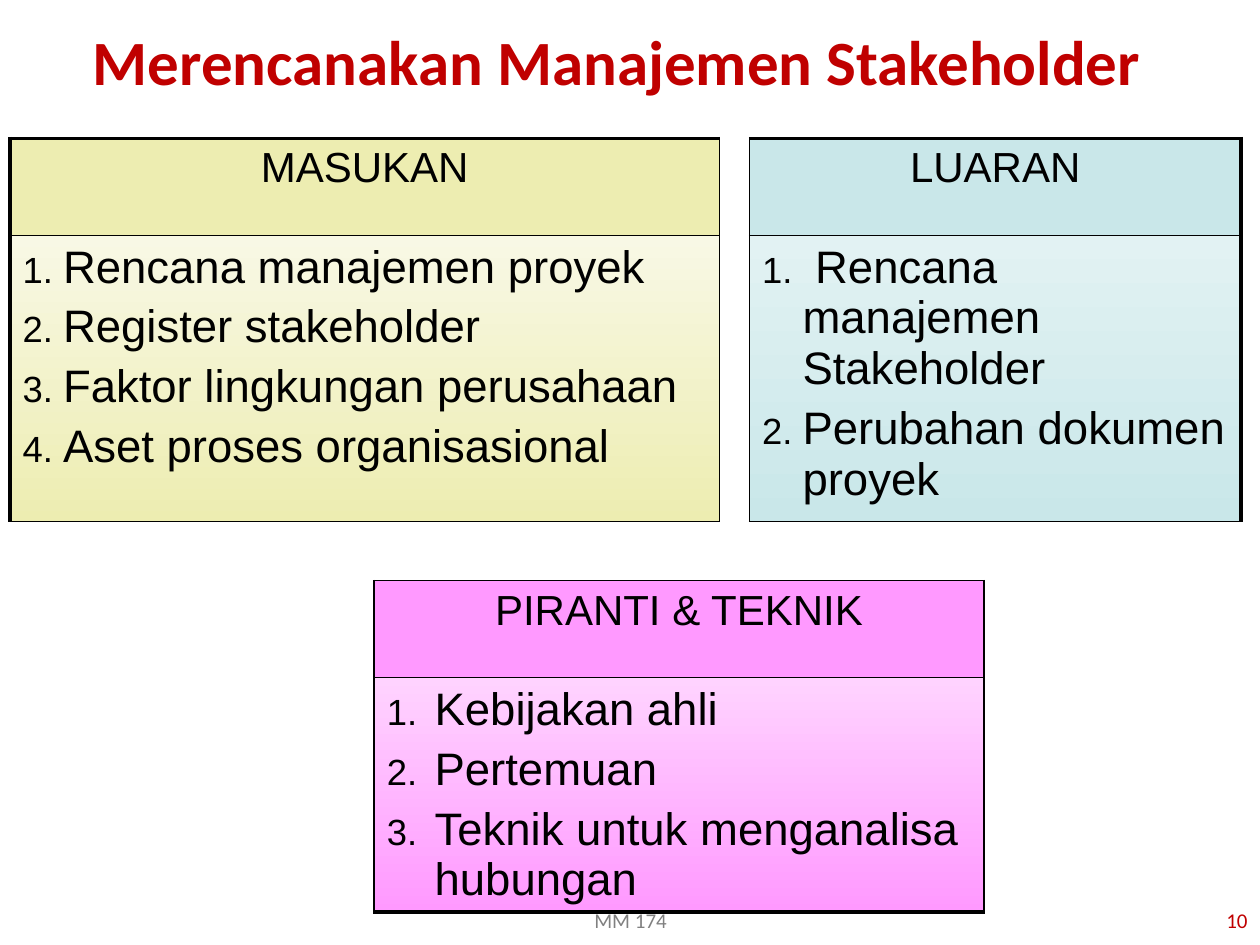
from dataclasses import dataclass

from lxml.etree import SubElement as Sub
from pptx import Presentation
from pptx.dml.color import RGBColor as Rgb
from pptx.enum.text import MSO_ANCHOR as Anchor, PP_ALIGN as Align
from pptx.oxml.ns import qn
from pptx.util import Inches, Pt


@dataclass(frozen=True)
class Theme:
    red: str = "C00000"
    grey: str = "808080"
    ink: str = "000000"
    head: str = "Calibri"
    body: str = "Arial"
    title: int = 36
    label: int = 24
    item: int = 26
    small: int = 12
    thin: float = 1
    thick: float = 2.25
    plain: str = "{2D5ABB26-0587-4C30-8999-92F81FD0307C}"


@dataclass(frozen=True)
class Note:
    text: str
    box: tuple
    align: Align
    size: int
    color: str
    bold: bool = False


@dataclass(frozen=True)
class Panel:
    label: str
    items: tuple
    row: int
    first: int
    last: int
    light: str
    deep: str
    indent: float
    thick: tuple  # outer sides with a heavy line


T = Theme()
COLS = (2.89, 2.74, 0.24, 1.86, 2.04)
ROWS = (0.77, 2.27, 0.47, 0.77, 1.86)

NOTES = (
    Note("Merencanakan Manajemen Stakeholder", (0.52, 0.17, 8.75, 0.61),
         Align.CENTER, T.title, T.red, True),
    Note("10", (7.67, 7.1, 2.33, 0.4), Align.RIGHT, T.small, T.red),
    Note("MM 174", (3.42, 7.1, 3.17, 0.4), Align.CENTER, T.small, T.grey),
)

PANELS = (
    Panel("MASUKAN",
          ("Rencana manajemen proyek", "Register stakeholder",
           "Faktor lingkungan perusahaan", "Aset proses organisasional"),
          0, 0, 1, "F8F8E5", "EDEDB1", 0.32, ("L", "T")),
    Panel("LUARAN",
          (" Rencana manajemen Stakeholder", "Perubahan dokumen proyek"),
          0, 3, 4, "E2F2F3", "C9E7E9", 0.32, ("R", "T")),
    Panel("PIRANTI & TEKNIK",
          ("Kebijakan ahli", "Pertemuan", "Teknik untuk menganalisa hubungan"),
          3, 1, 3, "FFD3FF", "FF99FF", 0.38, ("B",)),
)


def style(run, color: str, **look) -> None:
    for key, val in look.items():
        setattr(run.font, key, val)
    run.font.color.rgb = Rgb.from_string(color)


def add_note(slide, note: Note) -> None:
    frame = slide.shapes.add_textbox(*map(Inches, note.box)).text_frame
    frame.word_wrap = True
    frame.vertical_anchor = Anchor.MIDDLE
    para = frame.paragraphs[0]
    para.alignment = note.align
    run = para.add_run()
    run.text = note.text
    style(run, note.color, name=T.head, size=Pt(note.size), bold=note.bold)


def add_line(cell, side: str, width: float) -> None:
    line = Sub(cell._tc.get_or_add_tcPr(), qn(f"a:ln{side}"), w=str(Pt(width)))
    Sub(Sub(line, qn("a:solidFill")), qn("a:srgbClr"), val=T.ink)


def number(para, indent: float) -> None:
    prop = para._p.get_or_add_pPr()
    step = Inches(indent)
    prop.set("marL", str(step))
    prop.set("indent", str(-step))
    Sub(Sub(prop, qn("a:buClr")), qn("a:srgbClr"), val=T.ink)
    Sub(prop, qn("a:buSzPct"), val="80000")
    Sub(prop, qn("a:buAutoNum"), type="arabicPeriod")


def write(cell, lines: tuple, size: int, indent: float = 0) -> None:
    cell.margin_bottom = 0
    frame = cell.text_frame
    for pos, text in enumerate(lines):
        para = frame.add_paragraph() if pos else frame.paragraphs[0]
        para.space_before = Pt(size * 0.2 if pos else 0)
        if indent:
            number(para, indent)
        else:
            para.alignment = Align.CENTER
        run = para.add_run()
        run.text = text
        style(run, T.ink, name=T.body, size=Pt(size))


def add_panel(grid, panel: Panel) -> None:
    top, low = panel.row, panel.row + 1
    # Borders, then fill, on every cell that the panel covers
    for row in (top, low):
        for col in range(panel.first, panel.last + 1):
            cell = grid.cell(row, col)
            start = col == panel.first
            # The first cell of a span carries all four borders
            edges = {"L": start, "R": start or col == panel.last,
                     "T": True, "B": True}
            outer = {"L": True, "R": True, "T": row == top, "B": row == low}
            for side, shown in edges.items():
                if shown:
                    heavy = side in panel.thick and outer[side]
                    add_line(cell, side, T.thick if heavy else T.thin)
            if row == top:
                cell.fill.solid()
                cell.fill.fore_color.rgb = Rgb.from_string(panel.deep)
            else:
                cell.fill.gradient()
                cell.fill.gradient_angle = 270
                for stop, tone in zip(cell.fill.gradient_stops,
                                      (panel.light, panel.deep)):
                    stop.color.rgb = Rgb.from_string(tone)
        grid.cell(row, panel.first).merge(grid.cell(row, panel.last))
    # Heading and numbered list
    write(grid.cell(top, panel.first), (panel.label,), T.label)
    write(grid.cell(low, panel.first), panel.items, T.item, panel.indent)


def add_grid(slide) -> None:
    box = map(Inches, (0.08, 1.1, sum(COLS), sum(ROWS)))
    grid = slide.shapes.add_table(len(ROWS), len(COLS), *box).table
    grid.first_row = grid.horz_banding = False
    grid._tbl.tblPr.find(qn("a:tableStyleId")).text = T.plain
    for col, width in zip(grid.columns, COLS):
        col.width = Inches(width)
    for row, height in zip(grid.rows, ROWS):
        row.height = Inches(height)
    for panel in PANELS:
        add_panel(grid, panel)


def main() -> None:
    deck = Presentation()
    deck.slide_width, deck.slide_height = Inches(10), Inches(7.5)
    slide = deck.slides.add_slide(deck.slide_layouts[6])
    add_grid(slide)
    # Title and footers stay in front of the table
    for note in NOTES:
        add_note(slide, note)
    deck.save("out.pptx")


if __name__ == "__main__":
    main()
